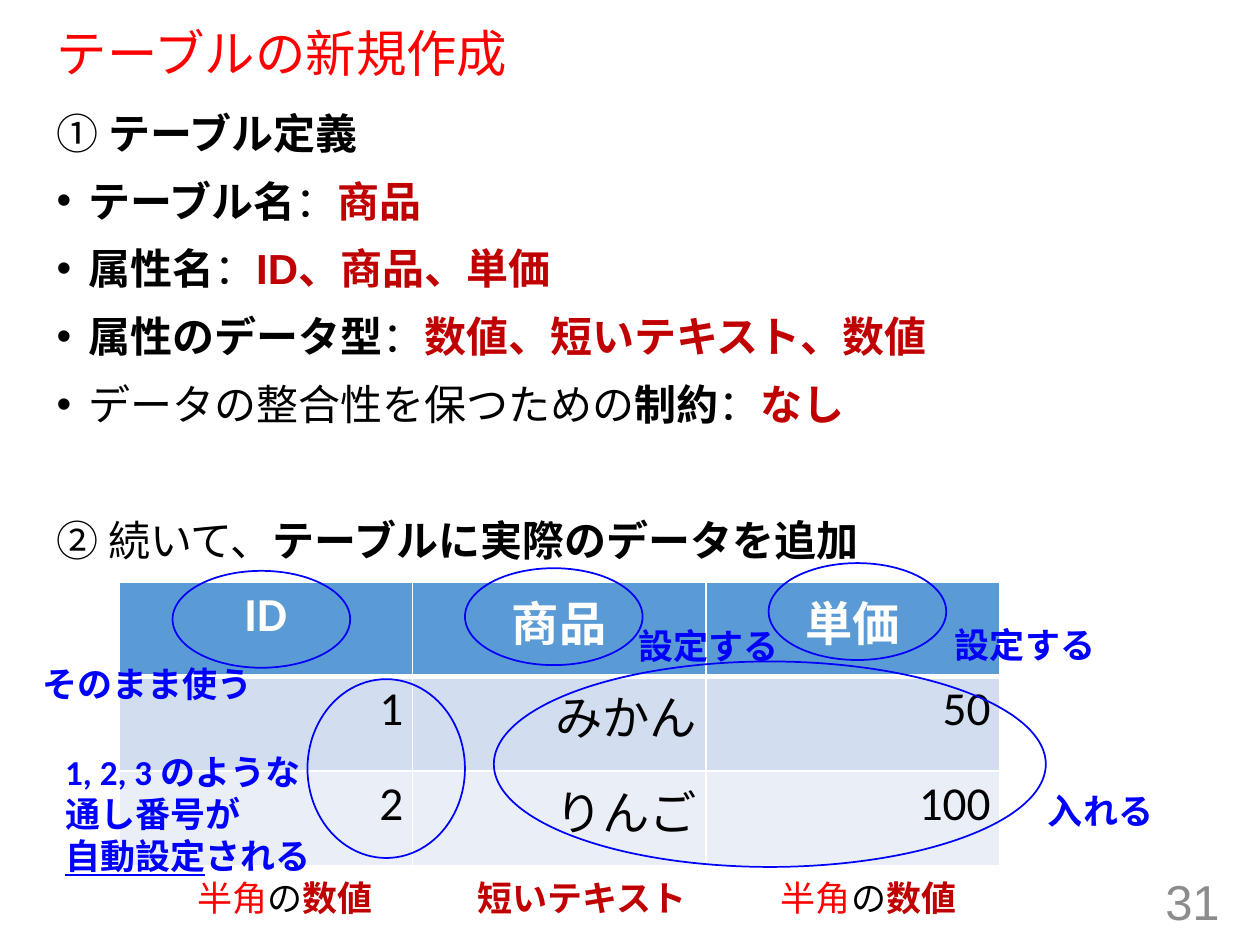
from lxml import etree
from pptx import Presentation
from pptx.dml.color import RGBColor
from pptx.enum import shapes, text
from pptx.oxml import ns
from pptx.util import Pt

COLORS = {
    "red": "FF0000", "dark_red": "C00000", "black": "000000", "blue": "0000FF",
    "white": "FFFFFF", "gray": "8C8C8C", "header": "5B9BD5",
    "band_dark": "D2DEEF", "band_light": "EAEFF7",
}


def rgb(name):
    return RGBColor.from_string(COLORS[name])


def add_text(paragraph, content, size=20, font="Calibri", color="black",
             bold=False, underline=False):
    run = paragraph.add_run()
    run.text = content
    run.font.size = Pt(size)
    run.font.name = font
    run.font.color.rgb = rgb(color)
    run.font.bold = bold
    run.font.underline = underline


prs = Presentation()
prs.slide_width, prs.slide_height = Pt(720), Pt(540)
slide = prs.slides.add_slide(prs.slide_layouts[1])

# Title
title = slide.shapes.title
title.left, title.top, title.width, title.height = Pt(25.2), Pt(13.7), Pt(666), Pt(36.7)
title.text_frame.auto_size = text.MSO_AUTO_SIZE.NONE
title.text_frame.vertical_anchor = text.MSO_ANCHOR.MIDDLE
heading = title.text_frame.paragraphs[0]
heading.alignment = text.PP_ALIGN.LEFT
heading.line_spacing = 0.9
add_text(heading, "テーブルの新規作成", size=28.8, font="Arial", color="red")

# Steps: bulleted?, space before, runs as (text, color, bold)
colon = ("：", "black", False)
steps = [
    (False, 10, [("① ", "black", False), ("テーブル定義", "black", True)]),
    (True, 10, [("テーブル名", "black", True), colon, ("商品", "dark_red", True)]),
    (True, 10, [("属性名", "black", True), colon, ("ID、商品、単価", "dark_red", True)]),
    (True, 10, [("属性のデータ型", "black", True), colon,
                ("数値、短いテキスト、数値", "dark_red", True)]),
    (True, 10, [("データの整合性を保つための", "black", False), ("制約", "black", True),
                colon, ("なし", "dark_red", True)]),
    (False, 48.8, [("② 続いて、", "black", False),
                   ("テーブルに実際のデータを追加", "black", True)]),
]
body = slide.placeholders[1]
body.left, body.top, body.width, body.height = Pt(25.2), Pt(57.6), Pt(666), Pt(463)
body.text_frame.auto_size = text.MSO_AUTO_SIZE.NONE
for i, (bulleted, gap, parts) in enumerate(steps):
    step = body.text_frame.add_paragraph() if i else body.text_frame.paragraphs[0]
    step.space_before = Pt(gap)
    props = step._p.get_or_add_pPr()
    indent = Pt(18) if bulleted else 0
    props.set("marL", str(indent))
    props.set("indent", str(-indent))
    if bulleted:
        etree.SubElement(props, ns.qn("a:buFont"), typeface="Arial")
        etree.SubElement(props, ns.qn("a:buChar"), char="•")
    else:
        etree.SubElement(props, ns.qn("a:buNone"))
    for content, color, bold in parts:
        add_text(step, content, size=24, font="Arial", color=color, bold=bold)

# Slide number
number = slide.shapes.add_textbox(Pt(542), Pt(500.4), Pt(162), Pt(28.8)).text_frame
number.word_wrap = True
number.vertical_anchor = text.MSO_ANCHOR.MIDDLE
number.paragraphs[0].alignment = text.PP_ALIGN.RIGHT
add_text(number.paragraphs[0], "31", size=28, font="Arial", color="gray")

# Product table
rows = [("ID", "商品", "単価"), ("1", "みかん", "50"), ("2", "りんご", "100")]
fills = ["header", "band_dark", "band_light"]
products = slide.shapes.add_table(3, 3, Pt(67.9), Pt(332.6), Pt(503.4), Pt(162)).table
for column in products.columns:
    column.width = Pt(167.8)
for r, values in enumerate(rows):
    products.rows[r].height = Pt(54)
    for c, value in enumerate(values):
        cell = products.cell(r, c)
        cell.margin_left = cell.margin_right = Pt(5.2)
        cell.margin_top = cell.margin_bottom = Pt(2.6)
        entry = cell.text_frame.paragraphs[0]
        entry.alignment = text.PP_ALIGN.RIGHT if r else text.PP_ALIGN.CENTER
        add_text(entry, value, size=27, color="black" if r else "white", bold=r == 0)
        # Borders come before the fill in the cell properties
        for side in ("lnL", "lnR", "lnT", "lnB"):
            thick = (r, side) in ((0, "lnB"), (1, "lnT"))
            border = etree.SubElement(cell._tc.get_or_add_tcPr(), ns.qn("a:" + side),
                                      w=str(Pt(3 if thick else 1)))
            solid = etree.SubElement(border, ns.qn("a:solidFill"))
            etree.SubElement(solid, ns.qn("a:srgbClr"), val=COLORS["white"])
        cell.fill.solid()
        cell.fill.fore_color.rgb = rgb(fills[r])

# Ellipses: one around each column heading, two around the data
rings = [(98.6, 326.2, 101.5, 55.4), (265.7, 324.7, 101.5, 55.4),
         (439.2, 321.8, 101.5, 55.4),
         (175.7, 388.1, 90, 102.2), (282.2, 378, 315.4, 117.4)]
for left, top, width, height in rings:
    ring = slide.shapes.add_shape(shapes.MSO_SHAPE.OVAL,
                                  Pt(left), Pt(top), Pt(width), Pt(height))
    ring.shadow.inherit = False
    ring.fill.background()
    ring.line.color.rgb = rgb("blue")
    ring.line.width = Pt(1)

# Labels: data types under the columns, then notes; lines of (text, format)
blue = {"color": "blue", "bold": True}
type_name = {"color": "dark_red", "bold": True}
numeric = [[("半角", {"color": "red"}), ("の", {}), ("数値", type_name)]]
labels = [
    (105.8, 497.5, 115.2, 31.7, numeric),
    (265.7, 497.5, 135.4, 31.7, [[("短いテキスト", type_name)]]),
    (439.2, 497.5, 115.2, 31.7, numeric),
    (17.3, 375.1, 135.4, 31.7, [[("そのまま使う", blue)]]),
    (357.8, 353.5, 95, 31.7, [[("設定する", blue)]]),
    (538.6, 352.8, 95, 31.7, [[("設定する", blue)]]),
    (30.2, 425.5, 156.2, 79.9, [[("1, 2, 3 のような", blue)], [("通し番号が", blue)],
                                [("自動設定", {**blue, "underline": True}),
                                 ("される", blue)]]),
    (591.8, 447.8, 74.9, 31.7, [[("入れる", blue)]]),
]
for left, top, width, height, lines in labels:
    label = slide.shapes.add_textbox(Pt(left), Pt(top), Pt(width), Pt(height)).text_frame
    label.word_wrap = False
    label.auto_size = text.MSO_AUTO_SIZE.SHAPE_TO_FIT_TEXT
    for i, line in enumerate(lines):
        paragraph = label.add_paragraph() if i else label.paragraphs[0]
        for content, style in line:
            add_text(paragraph, content, **style)

prs.save("out.pptx")
